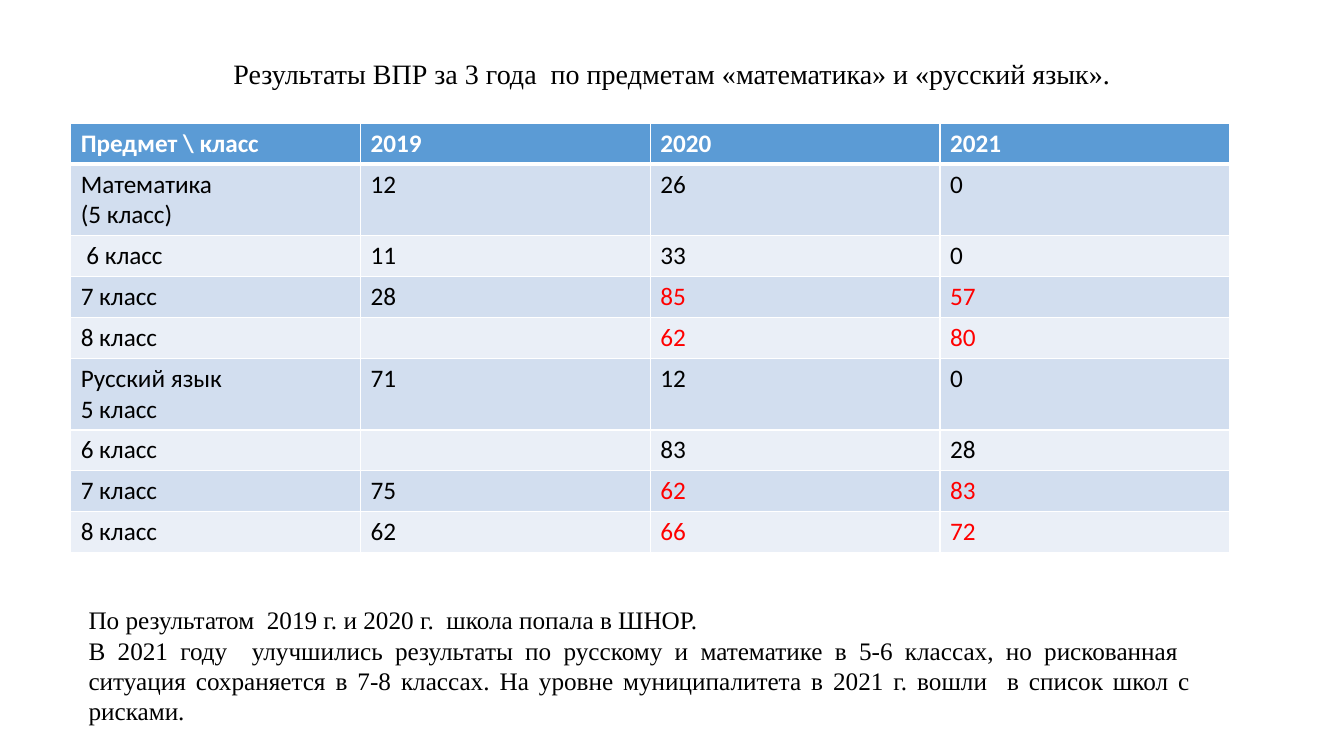
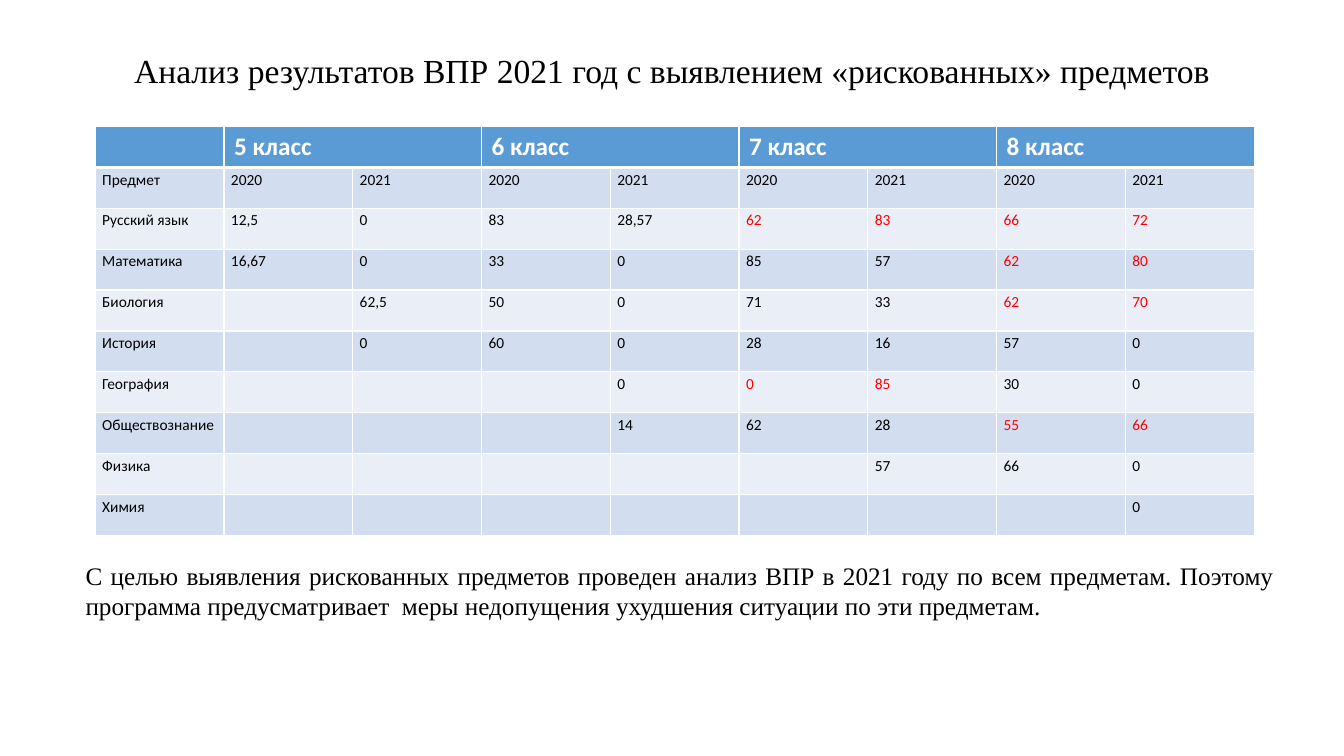
import itertools

import pptx
import pptx.dml.color
import pptx.enum.text
import pptx.oxml
import pptx.oxml.ns
import pptx.util

Pt = pptx.util.Pt
PP_ALIGN = pptx.enum.text.PP_ALIGN


def rgb(value):
    return pptx.dml.color.RGBColor.from_string(value)


def apply(obj, values):
    for name, value in values.items():
        setattr(obj, name, value)


class Deck:
    """Holds the shared style and the current slide, and adds elements to it."""

    serif, sans = "Times New Roman", "Calibri"
    black, white, red = "000000", "FFFFFF", "FF0000"
    header, bands = "5B9BD5", ("D2DEEF", "EAEFF7")
    row_height, extra_line = 29.2, 21.9

    def __init__(self):
        self.prs = pptx.Presentation()
        apply(self.prs, {"slide_width": Pt(960), "slide_height": Pt(540)})
        self.s = None

    def font(self, p, name, size, color, bold=False):
        for r in p.runs:
            apply(r.font, {"name": name, "size": Pt(size), "bold": bold})
            r.font.color.rgb = rgb(color)

    def place(self, sp, left, top, width, height):
        apply(sp, {"left": Pt(left), "top": Pt(top), "width": Pt(width), "height": Pt(height)})

    def slide(self, title, size, height):
        self.s = self.prs.slides.add_slide(self.prs.slide_layouts[5])
        sp = self.s.shapes.title
        self.place(sp, 66, 28.8, 828, height)
        tf = sp.text_frame
        tf.text = title
        apply(tf, {"word_wrap": True, "auto_size": pptx.enum.text.MSO_AUTO_SIZE.NONE,
                   "vertical_anchor": pptx.enum.text.MSO_ANCHOR.MIDDLE})
        p = tf.paragraphs[0]
        apply(p, {"alignment": PP_ALIGN.CENTER, "line_spacing": 0.9})
        self.font(p, self.serif, size, self.black)

    def note(self, text, left, top, width, height):
        sp = self.s.shapes.add_textbox(Pt(left), Pt(top), Pt(width), Pt(height))
        tf = sp.text_frame
        tf.text = text
        apply(tf, {"word_wrap": True,
                   "auto_size": pptx.enum.text.MSO_AUTO_SIZE.SHAPE_TO_FIT_TEXT})
        for p in tf.paragraphs:
            p.alignment = PP_ALIGN.JUSTIFY
            self.font(p, self.serif, 18, self.black)

    def borders(self, cell, top, bottom):
        tc_pr = cell._tc.get_or_add_tcPr()
        for side, width in {"L": 1, "R": 1, "T": top, "B": bottom}.items():
            tc_pr.append(pptx.oxml.parse_xml(
                f'<a:ln{side} {pptx.oxml.ns.nsdecls("a")} w="{Pt(width)}"><a:solidFill>'
                f'<a:srgbClr val="{self.white}"/></a:solidFill></a:ln{side}>'))

    def table(self, rows, left, top, reds, size=18, spacing=None, margins=None, span=1):
        heights = [self.row_height + self.extra_line * max(t.count("\n") for t in row)
                   for row in rows]
        tbl = self.s.shapes.add_table(len(rows), len(rows[0]), Pt(left), Pt(top),
                                      Pt(828), Pt(sum(heights))).table
        for i, row in enumerate(rows):
            tbl.rows[i].height = Pt(heights[i])
            for j, text in enumerate(row):
                cell = tbl.cell(i, j)
                cell.text = text
                self.borders(cell, 3 if i == 1 else 1, 3 if i == 0 else 1)
                cell.fill.solid()
                cell.fill.fore_color.rgb = rgb(self.bands[(i - 1) % 2] if i else self.header)
                if i:
                    apply(cell, margins or {})
                color = self.red if (i, j) in reds else self.black
                for p in cell.text_frame.paragraphs:
                    if i == 0:
                        self.font(p, self.sans, 18, self.white, True)
                    else:
                        if text:
                            p.line_spacing = spacing
                        self.font(p, self.sans, size, color)
        if span > 1:
            for j in range(1, len(rows[0]), span):
                tbl.cell(0, j).merge(tbl.cell(0, j + span - 1))
        return tbl


def main():
    deck = Deck()

    deck.slide("Результаты ВПР за 3 года  по предметам «математика» и «русский язык».", 20, 49.7)
    tbl = deck.table([
        ["Предмет \\ класс", "2019", "2020", "2021"],
        ["Математика\n(5 класс)", "12", "26", "0"],
        ["6 класс", "11", "33", "0"],
        ["7 класс", "28", "85", "57"],
        ["8 класс", "", "62", "80"],
        ["Русский язык\n5 класс", "71", "12", "0"],
        ["6 класс", "", "83", "28"],
        ["7 класс", "75", "62", "83"],
        ["8 класс", "62", "66", "72"],
    ], 50.5, 88, set(itertools.product((3, 4, 7, 8), (2, 3))))
    tbl.cell(2, 0).margin_left = Pt(11.2)
    deck.note("По результатом  2019 г. и 2020 г.  школа попала в ШНОР.\n"
              "В 2021 году  улучшились результаты по русскому и математике в 5-6 классах, "
              "но рискованная  ситуация сохраняется в 7-8 классах. На уровне муниципалитета "
              "в 2021 г. вошли  в список школ с рисками.", 56.2, 428.4, 801.4, 94.3)

    deck.slide("Анализ результатов ВПР 2021 год с выявлением «рискованных» предметов", 24, 46.8)
    reds = {*itertools.product((2, 3, 4, 7), (7, 8)), *itertools.product((2, 6), (5, 6))}
    deck.table([
        ["", "5 класс", "", "6 класс", "", "7 класс", "", "8 класс", ""],
        ["Предмет"] + ["2020", "2021"] * 4,
        ["Русский язык", "12,5", "0", "83", "28,57", "62", "83", "66", "72"],
        ["Математика", "16,67", "0", "33", "0", "85", "57", "62", "80"],
        ["Биология", "", "62,5", "50", "0", "71", "33", "62", "70"],
        ["История", "", "0", "60", "0", "28", "16", "57", "0"],
        ["География", "", "", "", "0", "0", "85", "30", "0"],
        ["Обществознание", "", "", "", "14", "62", "28", "55", "66"],
        ["Физика", "", "", "", "", "", "57", "66", "0"],
        ["Химия", "", "", "", "", "", "", "", "0"],
    ], 68, 90.4, reds, size=11, spacing=1.15, span=2,
        margins={"margin_left": Pt(5), "margin_right": Pt(5),
                 "margin_top": Pt(0), "margin_bottom": Pt(0)})
    deck.note("С целью выявления рискованных предметов проведен анализ ВПР в 2021 году по всем "
              "предметам. Поэтому программа предусматривает  меры недопущения ухудшения "
              "ситуации по эти предметам.", 54, 396.7, 863.3, 51)

    deck.prs.save("out.pptx")


if __name__ == "__main__":
    main()
